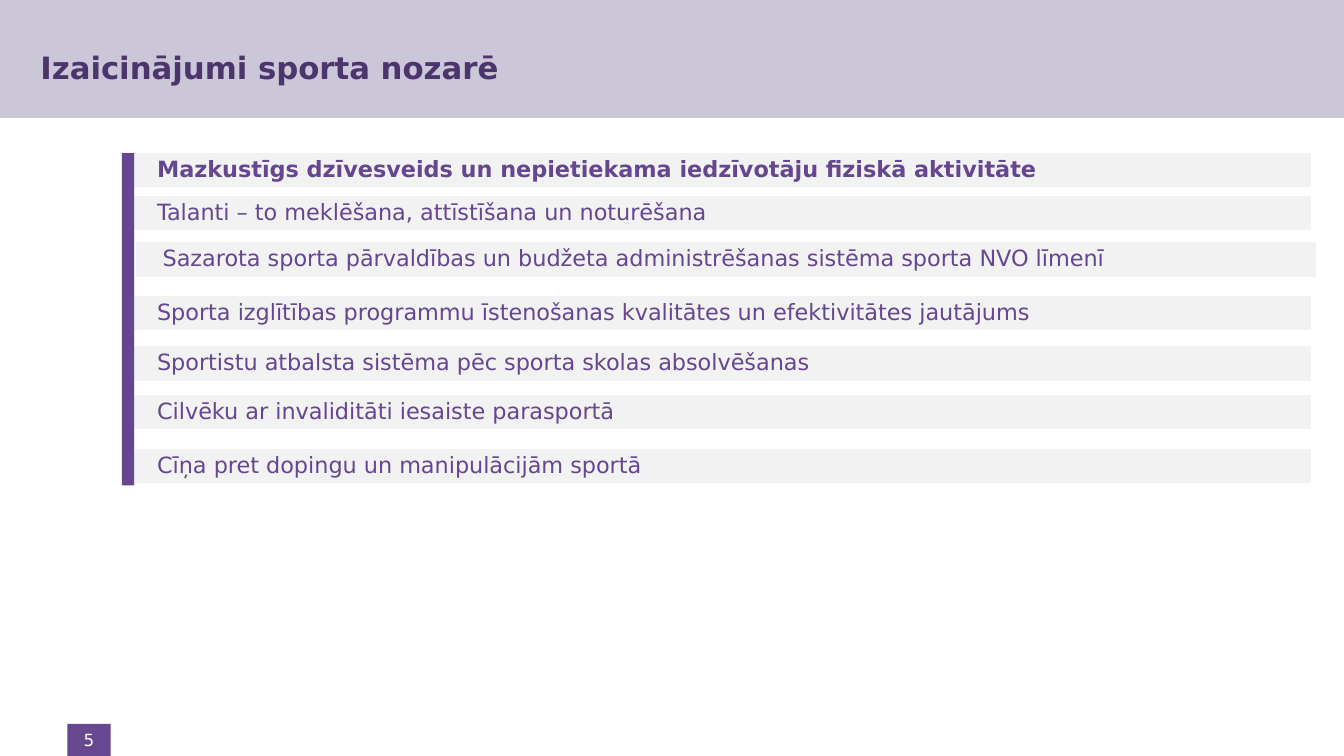
import pptx
import pptx.util
import pptx.dml.color
import pptx.enum.shapes
import pptx.enum.text
from dataclasses import dataclass

Cm = pptx.util.Cm
Pt = pptx.util.Pt
ALIGN = pptx.enum.text.PP_ALIGN

# Content
HEADING = "Izaicinājumi sporta nozarē"
PAGE_NUMBER = "5"
CHALLENGES = [  # text, top in cm, shift to the right in cm, bold
    ("Mazkustīgs dzīvesveids un nepietiekama iedzīvotāju fiziskā aktivitāte", 3.81, 0, True),
    ("Talanti – to meklēšana, attīstīšana un noturēšana", 4.9, 0, False),
    ("Sazarota sporta pārvaldības un budžeta administrēšanas sistēma sporta NVO līmenī", 6.07, 0.14, False),
    ("Sporta izglītības programmu īstenošanas kvalitātes un efektivitātes jautājums", 7.42, 0, False),
    ("Sportistu atbalsta sistēma pēc sporta skolas absolvēšanas", 8.69, 0, False),
    ("Cilvēku ar invaliditāti iesaiste parasportā", 9.91, 0, False),
    ("Cīņa pret dopingu un manipulācijām sportā", 11.28, 0, False),
]


@dataclass(frozen=True)
class Theme:
    font: str = "DejaVu Sans"
    band: str = "CBC7D8"
    heading: str = "4C346C"
    badge: str = "664790"
    accent: str = "664690"
    row: str = "F2F2F2"
    white: str = "FFFFFF"
    heading_size: int = 22
    row_size: int = 16
    number_size: int = 12


THEME = Theme()
SLIDE_WIDTH, SLIDE_HEIGHT = 33.87, 19.05
ROW_LEFT, ROW_WIDTH, ROW_HEIGHT = 3.25, 29.82, 0.94


def rgb(colour):
    return pptx.dml.color.RGBColor.from_string(colour)


def add_box(slide, left, top, width, height, fill, outline=None):
    box = slide.shapes.add_shape(
        pptx.enum.shapes.MSO_SHAPE.RECTANGLE, Cm(left), Cm(top), Cm(width), Cm(height))
    box.shadow.inherit = False
    box.fill.solid()
    box.fill.fore_color.rgb = rgb(fill)
    if outline:
        box.line.color.rgb = rgb(outline)
        box.line.width = Pt(2)
    else:
        box.line.fill.background()
    return box


def write(shape, text, *, size, colour, insets, bold=False, align=ALIGN.LEFT,
          line_spacing=1.0, space_after=0):
    frame = shape.text_frame
    frame.word_wrap = True
    frame.auto_size = pptx.enum.text.MSO_AUTO_SIZE.NONE
    frame.vertical_anchor = pptx.enum.text.MSO_ANCHOR.MIDDLE
    frame.margin_left, frame.margin_top, frame.margin_right, frame.margin_bottom = map(Cm, insets)
    paragraph = frame.paragraphs[0]
    paragraph.alignment = align
    paragraph.line_spacing = line_spacing
    paragraph.space_before = Pt(0)
    paragraph.space_after = Pt(space_after)
    run = paragraph.add_run()
    run.text = text
    run.font.name = THEME.font
    run.font.size = Pt(size)
    run.font.bold = bold
    run.font.color.rgb = rgb(colour)


def main():
    deck = pptx.Presentation()
    deck.slide_width, deck.slide_height = Cm(SLIDE_WIDTH), Cm(SLIDE_HEIGHT)
    slide = deck.slides.add_slide(deck.slide_layouts.get_by_name("Title Only"))

    # Heading on its band
    heading = slide.shapes.title
    heading.left, heading.top, heading.width, heading.height = map(Cm, (1.02, 0.1, 30.86, 3.18))
    write(heading, HEADING, size=THEME.heading_size, colour=THEME.heading,
          insets=(0, 0.13, 0.25, 0.13), bold=True)
    band = add_box(slide, 0, 0, SLIDE_WIDTH, 2.97, THEME.band)
    heading.element.addprevious(band.element)

    # Page number
    badge = add_box(slide, 1.7, 18.24, 1.09, 0.81, THEME.badge)
    write(badge, PAGE_NUMBER, size=THEME.number_size, colour=THEME.white,
          insets=(0.1, 0.1, 0.1, 0.1), align=ALIGN.CENTER)

    # Challenge rows
    for challenge, top, shift, bold in CHALLENGES:
        row = add_box(slide, ROW_LEFT + shift, top, ROW_WIDTH, ROW_HEIGHT, THEME.row, THEME.white)
        write(row, challenge, size=THEME.row_size, colour=THEME.accent,
              insets=(0.71, 0.13, 0.23, 0.13), bold=bold, line_spacing=0.9, space_after=5.6)

    # Accent bar beside the rows
    add_box(slide, 3.07, 3.86, 0.31, 8.37, THEME.accent)

    deck.save("out.pptx")


if __name__ == "__main__":
    main()
